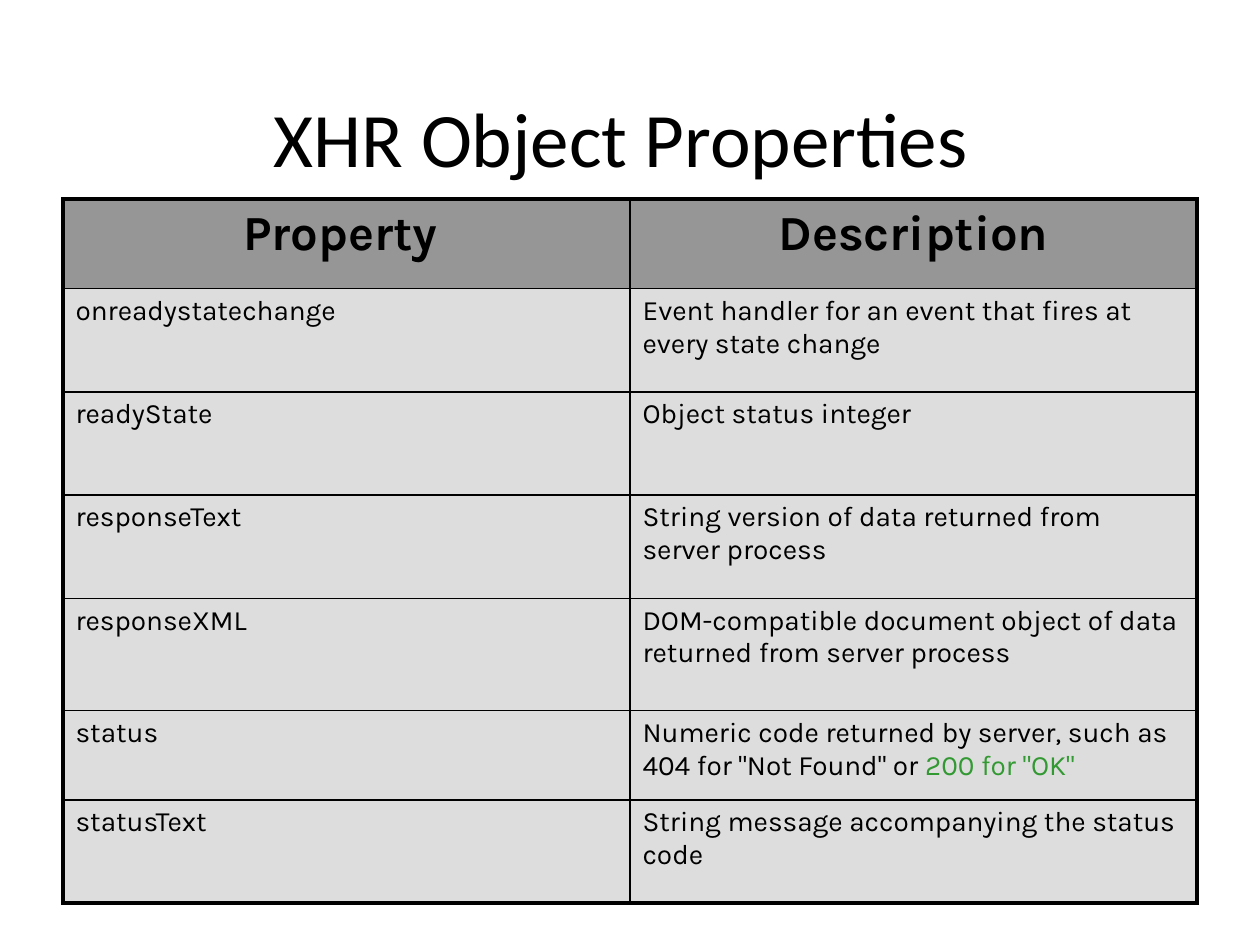
import pptx
import pptx.dml.color
import pptx.enum.text
import pptx.oxml
import pptx.oxml.ns
import pptx.util

Inches = pptx.util.Inches
Pt = pptx.util.Pt
ALIGN = pptx.enum.text.PP_ALIGN

COLORS = {"text": "000000", "header": "969696", "body": "DDDDDD", "ok": "339933", "border": "000000"}
TITLE = "XHR Object Properties "
HEADER = ("Property ", [("Description", "text")])
PROPERTIES = [
    ("onreadystatechange", [("Event handler for an event that fires at every state change", "text")]),
    ("readyState", [("Object status integer", "text")]),
    ("responseText", [("String version of data returned from server process", "text")]),
    ("responseXML", [("DOM-compatible document object of data returned from server process", "text")]),
    ("status", [('Numeric code returned by server, such as 404 for "Not Found" or ', "text"),
                ('200 for "OK"', "ok")]),
    ("statusText", [("String message accompanying the status code", "text")]),
]
ROW_HEIGHTS = [0.71, 0.82, 0.82, 0.82, 0.89, 0.71, 0.82]
COLUMN_WIDTH = 4.5
OUTER_LINE, INNER_LINE = 2.25, 1


def rgb(name):
    return pptx.dml.color.RGBColor.from_string(COLORS[name])


def add_borders(cell, widths):
    properties = cell._tc.get_or_add_tcPr()
    for side, width in widths.items():
        properties.append(pptx.oxml.parse_xml(
            f'<a:ln{side} {pptx.oxml.ns.nsdecls("a")} w="{int(Pt(width))}"><a:solidFill>'
            f'<a:srgbClr val="{COLORS["border"]}"/></a:solidFill></a:ln{side}>'))


def fill_cell(cell, runs, is_header):
    size = 28 if is_header else 16
    cell.fill.solid()
    cell.fill.fore_color.rgb = rgb("header" if is_header else "body")
    paragraph = cell.text_frame.paragraphs[0]
    paragraph.alignment = ALIGN.CENTER if is_header else ALIGN.LEFT
    paragraph.space_before = Pt(size * 0.2)
    for text, color in runs:
        run = paragraph.add_run()
        run.text = text
        run.font.name = "Karla"
        run.font.size = Pt(size)
        run.font.bold = is_header
        run.font.color.rgb = rgb(color)


def add_title(slide):
    title = slide.shapes.title
    title.left, title.top, title.width, title.height = map(Inches, (0.5, 0.33, 9, 1.51))
    title.text_frame.text = TITLE
    title.text_frame.vertical_anchor = pptx.enum.text.MSO_ANCHOR.MIDDLE
    paragraph = title.text_frame.paragraphs[0]
    paragraph.alignment = ALIGN.CENTER
    paragraph.font.name = "Calibri"
    paragraph.font.size = Pt(44)
    paragraph.font.color.rgb = rgb("text")


def add_property_table(slide):
    rows = [HEADER] + PROPERTIES
    table = slide.shapes.add_table(
        len(rows), 2, Inches(0.5), Inches(1.58), Inches(2 * COLUMN_WIDTH), Inches(sum(ROW_HEIGHTS))).table
    for column in table.columns:
        column.width = Inches(COLUMN_WIDTH)
    for row_index, (name, description) in enumerate(rows):
        table.rows[row_index].height = Inches(ROW_HEIGHTS[row_index])
        for column_index, runs in enumerate(([(name, "text")], description)):
            cell = table.cell(row_index, column_index)
            on_edge = {"L": column_index == 0, "R": column_index == 1,
                       "T": row_index == 0, "B": row_index == len(rows) - 1}
            add_borders(cell, {side: OUTER_LINE if edge else INNER_LINE for side, edge in on_edge.items()})
            fill_cell(cell, runs, row_index == 0)


def main():
    """Build the slide listing the XHR object properties."""
    presentation = pptx.Presentation()
    presentation.slide_width = Inches(10)
    presentation.slide_height = Inches(7.5)
    slide = presentation.slides.add_slide(presentation.slide_layouts[5])
    add_title(slide)
    add_property_table(slide)
    presentation.save("out.pptx")


if __name__ == "__main__":
    main()
